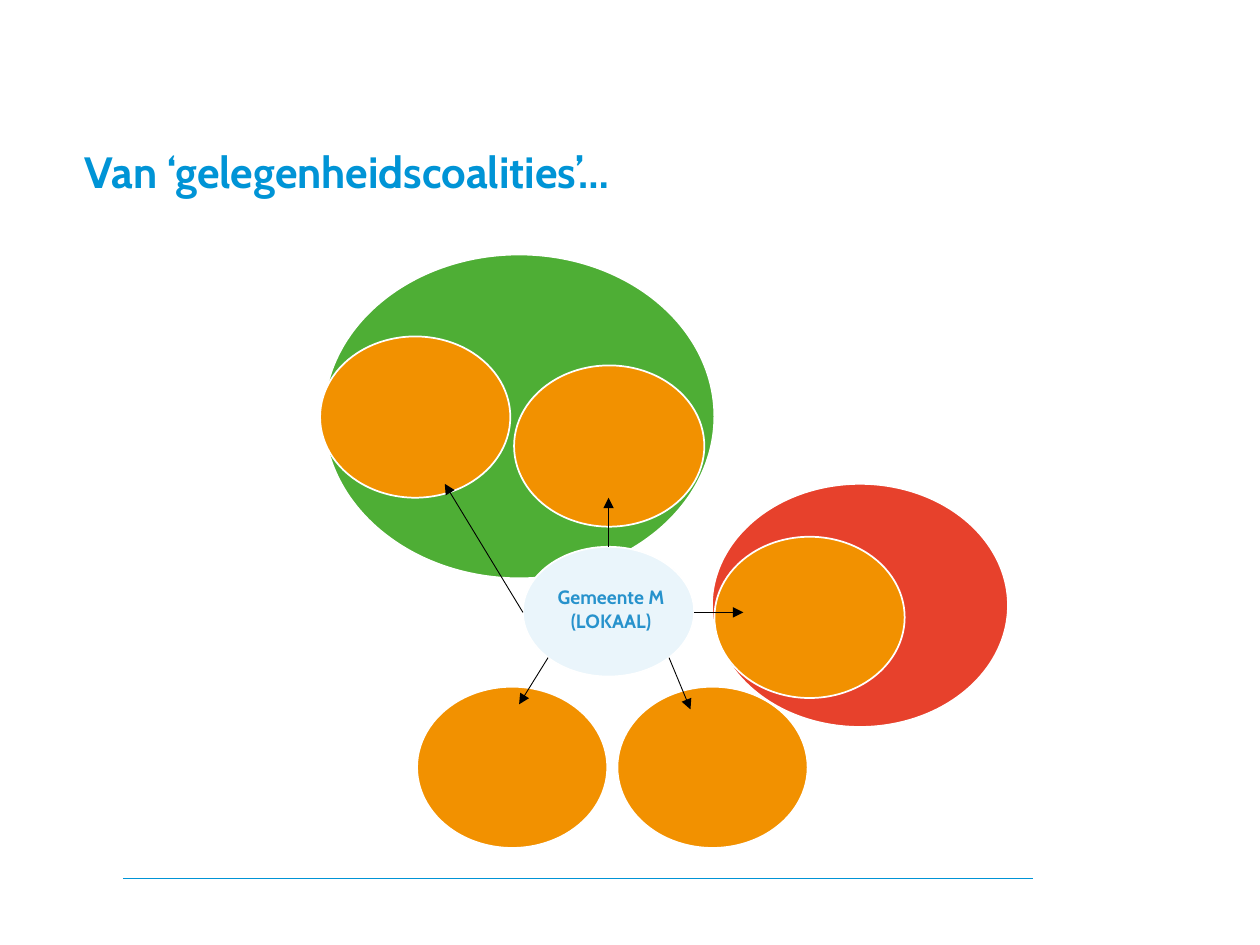
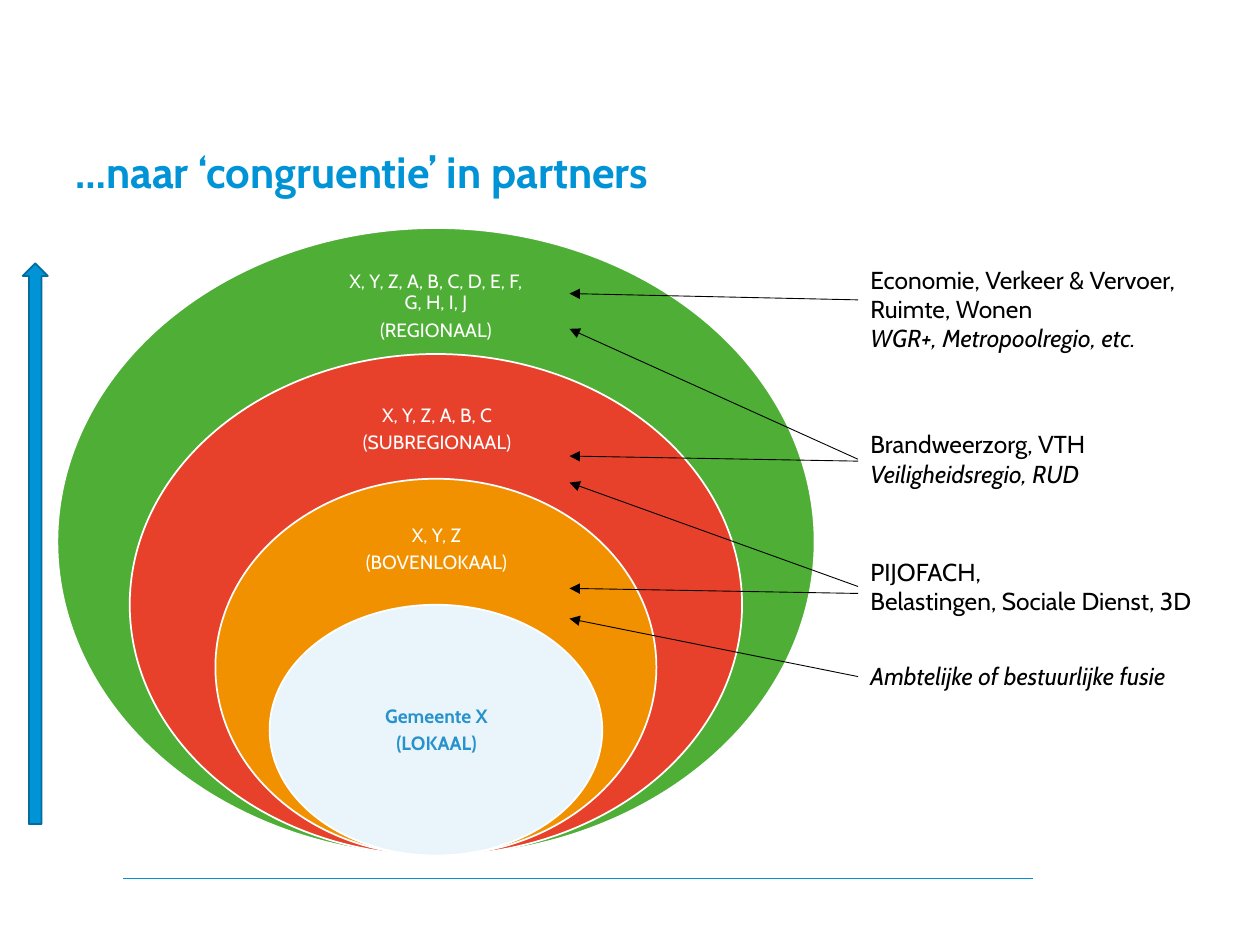
from dataclasses import dataclass

from lxml import etree
from pptx import Presentation
from pptx import util as u
from pptx.dml.color import RGBColor
from pptx.enum import shapes, text
from pptx.oxml import ns


@dataclass(frozen=True)
class Theme:
    """Colours, font and type sizes shared by the slides."""
    font: str = "Cabin"
    blue: str = "0094D6"
    dark_blue: str = "006D9E"
    label_blue: str = "2792CC"
    pale: str = "EAF5FB"
    orange: str = "F29100"
    red: str = "E7412C"
    green: str = "4EAE35"
    white: str = "FFFFFF"
    black: str = "000000"
    title_size: float = 25
    ring_size: float = 11
    note_size: float = 14
    thin: float = 0.5
    outline: float = 1


THEME = Theme()
LEFT_SIDE = 1
ORANGE_SIZE = (1.51, 1.28)
RING_CENTRE, RING_BOTTOM = 3.46, 6.79
NOTE_LEFT, ARROW_TIP = 6.81, 4.52


def colour(code):
    """Turn a hex code into a colour."""
    return RGBColor.from_string(code)


def add_span(para, words, size, code, bold=False, italic=False):
    """Add one formatted run to a paragraph."""
    span = para.add_run()
    span.text = words
    font = span.font
    font.name, font.size = THEME.font, u.Pt(size)
    font.bold, font.italic = bold, italic
    font.color.rgb = colour(code)


def add_line(page, start, end, code=THEME.black, arrow=True):
    """Draw a thin line, with an arrowhead at its end if asked."""
    points = [u.Inches(value) for value in (*start, *end)]
    line = page.shapes.add_connector(shapes.MSO_CONNECTOR.STRAIGHT, *points)
    line.line.color.rgb = colour(code)
    line.line.width = u.Pt(THEME.thin)
    if arrow:
        head = etree.SubElement(line.line._get_or_add_ln(), ns.qn("a:tailEnd"))
        head.set("type", "triangle")
    etree.SubElement(line._element.spPr, ns.qn("a:effectLst"))
    return line


def add_figure(page, preset, place, fill, outline=THEME.white):
    """Draw a filled preset shape at left, top, width, height."""
    figure = page.shapes.add_shape(preset, *map(u.Inches, place))
    figure.shadow.inherit = False
    figure.fill.solid()
    figure.fill.fore_color.rgb = colour(fill)
    figure.line.color.rgb = colour(outline)
    figure.line.width = u.Pt(THEME.outline)
    return figure


def add_ellipse(page, place, fill):
    """Draw a white-edged ellipse."""
    return add_figure(page, shapes.MSO_SHAPE.OVAL, place, fill)


def add_label(page, place, lines, size, code, bold=False, centred=False):
    """Add an unwrapped text box; each line is its words and whether italic."""
    box = page.shapes.add_textbox(*map(u.Inches, place))
    frame = box.text_frame
    frame.word_wrap = False
    frame.auto_size = text.MSO_AUTO_SIZE.SHAPE_TO_FIT_TEXT
    for index, (words, italic) in enumerate(lines):
        para = frame.add_paragraph() if index else frame.paragraphs[0]
        para.alignment = text.PP_ALIGN.CENTER if centred else text.PP_ALIGN.LEFT
        add_span(para, words, size, code, bold, italic)
    return box


def add_ring(page, width, height, fill, label_place, lines, code=THEME.white, bold=False):
    """Draw one nested ring, standing on the shared base, with its label."""
    left, top = RING_CENTRE - width / 2, RING_BOTTOM - height
    add_ellipse(page, (left, top, width, height), fill)
    box = page.shapes.add_textbox(*map(u.Inches, label_place))
    frame = box.text_frame
    frame.word_wrap = True
    frame.vertical_anchor = text.MSO_ANCHOR.MIDDLE
    frame.margin_left = frame.margin_right = u.Inches(0.09)
    frame.margin_top = frame.margin_bottom = u.Inches(0.09)
    for index, words in enumerate(lines):
        para = frame.add_paragraph() if index else frame.paragraphs[0]
        para.alignment = text.PP_ALIGN.CENTER
        para.line_spacing = 0.9
        para.space_after = u.Pt(THEME.ring_size * 0.35)
        add_span(para, words, THEME.ring_size, code, bold)


def add_page(deck, title, left):
    """Add a title-only slide with its title and footer rule."""
    page = deck.slides.add_slide(deck.slide_layouts[5])
    add_line(page, (0.98, 6.97), (8.2, 6.97), THEME.blue, arrow=False)
    box = page.shapes.title
    box.left, box.top = u.Inches(left), u.Inches(0.5)
    box.width, box.height = u.Inches(9.94 - left), u.Inches(1.07)
    frame = box.text_frame
    frame.word_wrap = True
    frame.auto_size = text.MSO_AUTO_SIZE.NONE
    frame.vertical_anchor = text.MSO_ANCHOR.BOTTOM
    frame.margin_left = frame.margin_right = 0
    frame.margin_top = frame.margin_bottom = 0
    para = frame.paragraphs[0]
    para.alignment = text.PP_ALIGN.LEFT
    para.line_spacing = 0.9
    add_span(para, title, THEME.title_size, THEME.blue, bold=True)
    return page


def build_coalitions(deck):
    """Build the slide with loose coalitions around one municipality."""
    page = add_page(deck, "Van ‘gelegenheidscoalities’…", 0.67)
    add_ellipse(page, (5.65, 3.84, 2.35, 1.93), THEME.red)
    add_ellipse(page, (2.57, 2.02, 3.1, 2.57), THEME.green)
    add_ellipse(page, (4.15, 4.34, 1.36, 1.03), THEME.pale)
    for corner in ((4.9, 5.45), (5.67, 4.26), (3.31, 5.45), (2.54, 2.67), (4.08, 2.9)):
        add_ellipse(page, (*corner, *ORANGE_SIZE), THEME.orange)
    add_label(page, (4.26, 4.6, 1.18, 0.47), [("Gemeente M", False), ("(LOKAAL)", False)],
              THEME.ring_size, THEME.label_blue, bold=True, centred=True)
    for start, end in (
        ((4.35, 5.22), (4.12, 5.59)),
        ((5.31, 5.22), (5.48, 5.63)),
        ((4.15, 4.86), (3.53, 3.84)),
        ((5.51, 4.86), (5.9, 4.86)),
        ((4.83, 4.34), (4.83, 3.95)),
    ):
        add_line(page, start, end)


def build_congruence(deck):
    """Build the slide with nested rings and the tasks that fit each ring."""
    page = add_page(deck, "…naar ‘congruentie’ in partners", 0.6)
    add_ring(page, 6.01, 4.98, THEME.green, (2.62, 2.06, 1.68, 0.75),
             ["X, Y, Z, A, B, C, D, E, F, G, H, I, J", "(REGIONAAL)"])
    add_ring(page, 4.86, 3.98, THEME.red, (2.62, 3.05, 1.7, 0.72),
             ["X, Y, Z, A, B, C", "(SUBREGIONAAL)"])
    add_ring(page, 3.5, 2.99, THEME.orange, (2.65, 4.03, 1.63, 0.67),
             ["X, Y, Z", "(BOVENLOKAAL)"])
    add_ring(page, 2.64, 1.99, THEME.pale, (2.53, 5.3, 1.87, 1),
             ["Gemeente X", "(LOKAAL)"], THEME.label_blue, bold=True)
    add_figure(page, shapes.MSO_SHAPE.UP_ARROW, (0.18, 2.09, 0.2, 4.45),
               THEME.blue, THEME.dark_blue)

    notes = (
        ((2.05, 2.76, 0.81), [("Economie, Verkeer & Vervoer,", False), ("Ruimte, Wonen", False),
                              ("WGR+, Metropoolregio, etc.", True)],
         [(2.38, 2.33, False)]),
        ((3.36, 2.05, 0.57), [("Brandweerzorg, VTH", False), ("Veiligheidsregio, RUD", True)],
         [(3.66, 3.62, False), (3.64, 2.61, True)]),
        ((4.37, 2.89, 0.57), [("PIJOFACH,", False), ("Belastingen, Sociale Dienst, 3D", False)],
         [(4.71, 4.67, False), (4.65, 3.83, True)]),
        ((5.2, 2.87, 0.34), [("Ambtelijke of bestuurlijke fusie", True)],
         [(5.38, 4.91, True)]),
    )
    for place, lines, arrows in notes:
        box = add_label(page, (NOTE_LEFT, *place), lines, THEME.note_size, THEME.black)
        for start, end, joined in arrows:
            line = add_line(page, (NOTE_LEFT, start), (ARROW_TIP, end))
            if joined:
                line.begin_connect(box, LEFT_SIDE)


def main():
    """Build and save the deck."""
    deck = Presentation()
    deck.slide_width, deck.slide_height = u.Inches(10), u.Inches(7.5)
    build_coalitions(deck)
    build_congruence(deck)
    deck.save("out.pptx")


if __name__ == "__main__":
    main()
